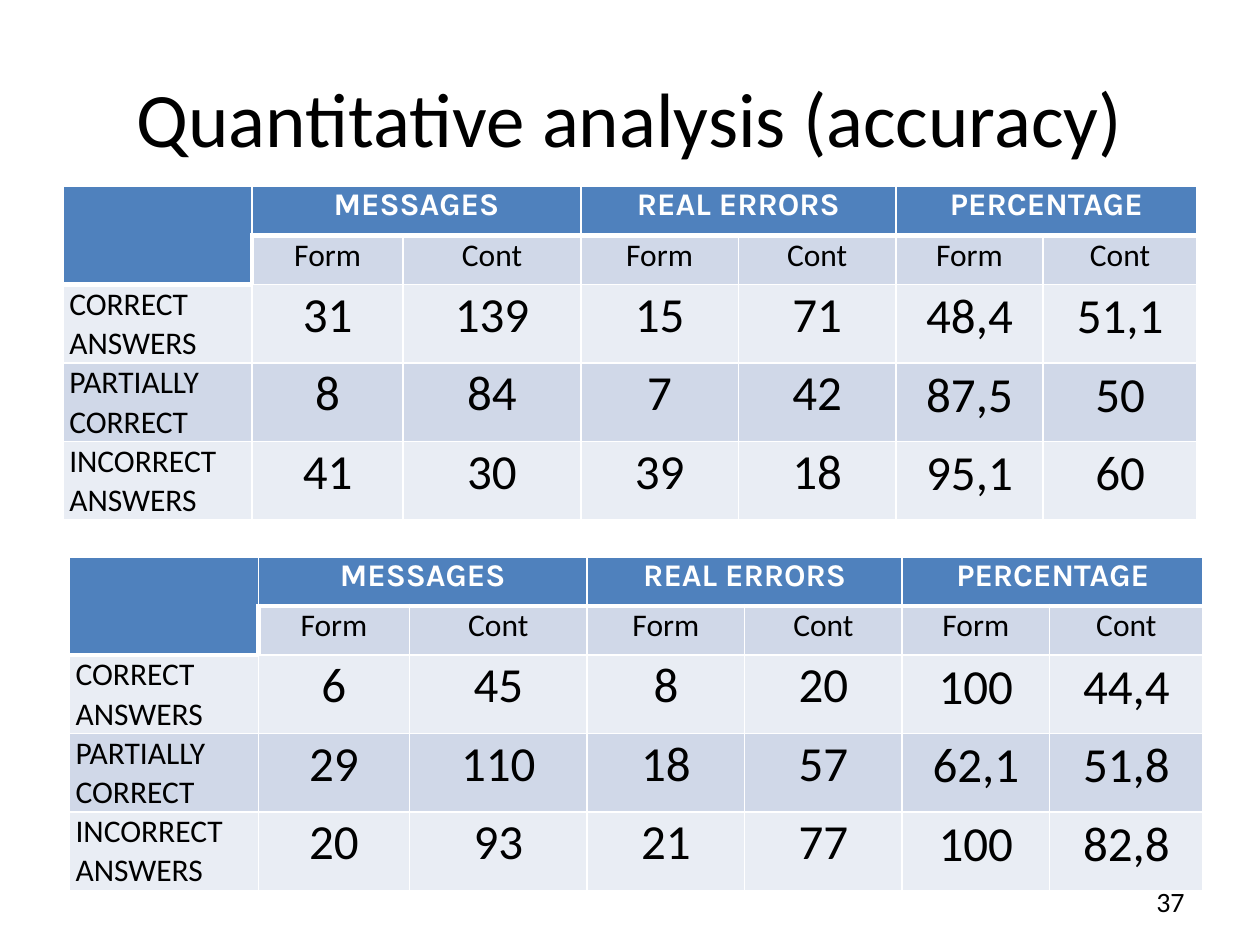
from lxml import etree
from pptx import Presentation
from pptx import util as u
from pptx.dml.color import RGBColor
from pptx.enum import text
from pptx.oxml.ns import qn

COLORS = {
    "black": "000000",
    "white": "FFFFFF",
    "header": "4F81BD",
    "band_dark": "D0D8E8",
    "band_light": "E9EDF4",
}
COLUMN_WIDTHS = [1.5, 1.2, 1.41, 1.25, 1.25, 1.17, 1.22]
ROW_HEIGHTS = [0.39, 0.39, 0.61, 0.61, 0.61]
GROUPS = ["MESSAGES", "REAL ERRORS", "PERCENTAGE"]
ANSWERS = ["CORRECT ANSWERS", "PARTIALLY CORRECT", "INCORRECT ANSWERS"]
FIRST_VALUES = [
    ["31", "139", "15", "71", "48,4", "51,1"],
    ["8", "84", "7", "42", "87,5", "50"],
    ["41", "30", "39", "18", "95,1", "60"],
]
SECOND_VALUES = [
    ["6", "45", "8", "20", "100", "44,4"],
    ["29", "110", "18", "57", "62,1", "51,8"],
    ["20", "93", "21", "77", "100", "82,8"],
]


def write_text(frame, words, size=18, font="Calibri", color="black", bold=False,
               align=text.PP_ALIGN.CENTER, spacing=None):
    paragraph = frame.paragraphs[0]
    paragraph.alignment = align
    if spacing:
        paragraph.line_spacing = spacing
    run = paragraph.add_run()
    run.text = words
    run.font.size = u.Pt(size)
    run.font.name = font
    run.font.bold = bold
    run.font.color.rgb = RGBColor.from_string(COLORS[color])


def set_margins(target, left, top, right, bottom):
    target.margin_left, target.margin_top = u.Inches(left), u.Inches(top)
    target.margin_right, target.margin_bottom = u.Inches(right), u.Inches(bottom)


def style_cell(cell, fill, thick_sides=""):
    """White borders, 3 pt on the sides named in thick_sides and 1 pt elsewhere."""
    properties = cell._tc.get_or_add_tcPr()
    for side in "LRTB":
        width = u.Pt(3 if side in thick_sides else 1)
        line = etree.SubElement(properties, qn(f"a:ln{side}"), w=str(width))
        solid = etree.SubElement(line, qn("a:solidFill"))
        etree.SubElement(solid, qn("a:srgbClr"), val=COLORS["white"])
    cell.fill.solid()
    cell.fill.fore_color.rgb = RGBColor.from_string(COLORS[fill])


def add_title(slide, words, left, top, width, height):
    title = slide.shapes.title
    title.left, title.top = u.Inches(left), u.Inches(top)
    title.width, title.height = u.Inches(width), u.Inches(height)
    title.text_frame.vertical_anchor = text.MSO_ANCHOR.MIDDLE
    write_text(title.text_frame, words, size=44)


def add_accuracy_table(slide, values, left, top, width, height):
    shape = slide.shapes.add_table(len(ROW_HEIGHTS), len(COLUMN_WIDTHS), u.Inches(left),
                                   u.Inches(top), u.Inches(width), u.Inches(height))
    table = shape.table
    for column, column_width in zip(table.columns, COLUMN_WIDTHS):
        column.width = u.Inches(column_width * width / sum(COLUMN_WIDTHS))
    for row, row_height in zip(table.rows, ROW_HEIGHTS):
        row.height = u.Inches(row_height)

    # Cell fills, borders and margins
    for row in range(len(ROW_HEIGHTS)):
        for column in range(len(COLUMN_WIDTHS)):
            cell = table.cell(row, column)
            if row == 0 or (row == 1 and column == 0):
                style_cell(cell, "header", "B")
            else:
                thick = "T" if row == 1 or (row == 2 and column == 0) else ""
                thick += "L" if row == 1 and column == 1 else ""
                style_cell(cell, "band_dark" if row % 2 else "band_light", thick)
            if row > 1 and column > 4:
                set_margins(cell, 0.01, 0.01, 0.01, 0)
            else:
                set_margins(cell, 0.05, 0, 0.05, 0)

    # Two header rows
    table.cell(0, 0).merge(table.cell(1, 0))
    for index, group in enumerate(GROUPS):
        column = 1 + 2 * index
        table.cell(0, column).merge(table.cell(0, column + 1))
        write_text(table.cell(0, column).text_frame, group, font="Karla",
                   color="white", bold=True, spacing=1.01)
        for offset, kind in enumerate(["Form", "Cont"]):
            write_text(table.cell(1, column + offset).text_frame, kind, spacing=1.02)

    # Answer rows
    for row, (answer, numbers) in enumerate(zip(ANSWERS, values), start=2):
        write_text(table.cell(row, 0).text_frame, answer,
                   align=text.PP_ALIGN.LEFT, spacing=1.02)
        for column, number in enumerate(numbers, start=1):
            write_text(table.cell(row, column).text_frame, number, size=28, spacing=1.02)


def add_slide_number(slide, number, left, top, width, height):
    box = slide.shapes.add_textbox(u.Inches(left), u.Inches(top),
                                   u.Inches(width), u.Inches(height))
    frame = box.text_frame
    frame.word_wrap = True
    frame.vertical_anchor = text.MSO_ANCHOR.MIDDLE
    set_margins(frame, 0.1, 0.05, 0.1, 0.05)
    write_text(frame, number, size=16, align=text.PP_ALIGN.RIGHT)


def main():
    presentation = Presentation()
    presentation.slide_width, presentation.slide_height = u.Inches(10), u.Inches(7.5)
    slide = presentation.slides.add_slide(presentation.slide_layouts[5])
    add_title(slide, "Quantitative analysis (accuracy)", 0.5, 0.3, 9, 1.25)
    add_accuracy_table(slide, FIRST_VALUES, 0.5, 1.48, 9, 2.62)
    add_accuracy_table(slide, SECOND_VALUES, 0.55, 4.42, 9, 2.62)
    add_slide_number(slide, "37", 7.17, 6.95, 2.33, 0.4)
    presentation.save("out.pptx")


if __name__ == "__main__":
    main()
